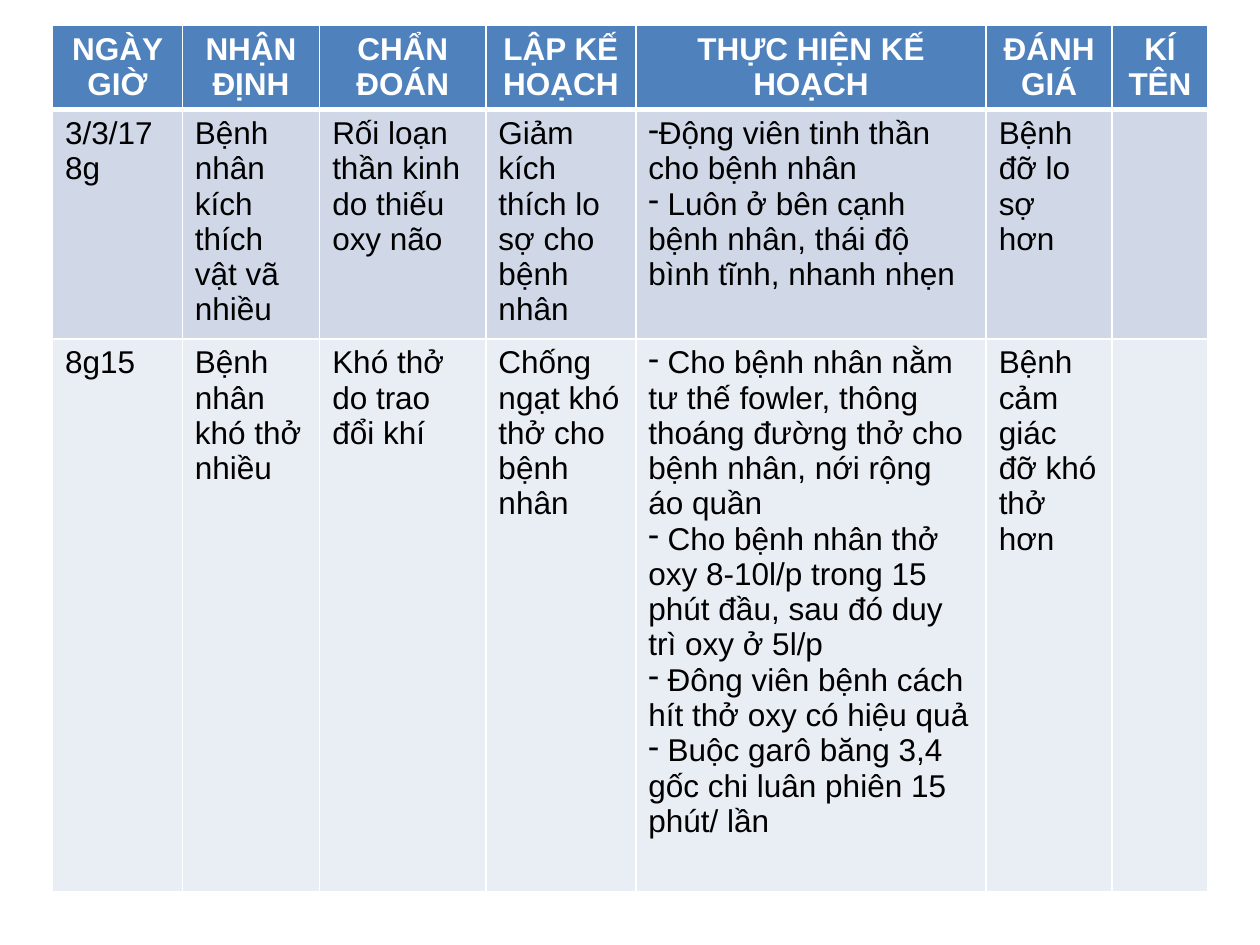
from lxml import etree
from pptx import Presentation
from pptx import util as u
from pptx.dml.color import RGBColor
from pptx.enum import text
from pptx.oxml import ns

COLORS = {
    "header": "4F81BD",
    "odd": "D0D8E8",
    "even": "E9EDF4",
    "white": "FFFFFF",
    "black": "000000",
}
COLUMN_WIDTHS = [74.2, 78.5, 95, 85.7, 200.2, 72, 54.7]
ROW_HEIGHTS = [48.2, 131, 316.1]
CARE_PLAN = [
    ["NGÀY GIỜ", "NHẬN ĐỊNH", "CHẨN ĐOÁN", "LẬP KẾ HOẠCH",
     "THỰC HIỆN KẾ HOẠCH", "ĐÁNH GIÁ", "KÍ TÊN"],
    ["3/3/17\n8g", "Bệnh nhân kích thích vật vã nhiều",
     "Rối loạn thần kinh do thiếu oxy não",
     "Giảm kích thích lo sợ cho bệnh nhân",
     ["Động viên tinh thần cho bệnh nhân",
      " Luôn ở bên cạnh bệnh nhân, thái độ bình tĩnh, nhanh nhẹn"],
     "Bệnh đỡ lo sợ hơn", ""],
    ["8g15", "Bệnh nhân khó thở nhiều", "Khó thở do trao đổi khí",
     "Chống ngạt khó thở cho bệnh nhân",
     [" Cho bệnh nhân nằm tư thế fowler, thông thoáng đường thở cho bệnh nhân, nới rộng áo quần",
      " Cho bệnh nhân thở oxy 8-10l/p trong 15 phút đầu, sau đó duy trì oxy ở 5l/p",
      " Đông viên bệnh cách hít thở oxy có hiệu quả",
      " Buộc garô băng 3,4 gốc chi luân phiên 15 phút/ lần"],
     "Bệnh cảm giác đỡ khó thở hơn", ""],
]


class SlideBuilder:
    """Holds the text style and the current slide, and draws its elements."""

    font_name = "Arial"
    font_size = u.Pt(18)

    def __init__(self, slide):
        self.slide = slide

    def color(self, name):
        return RGBColor.from_string(COLORS[name])

    def table(self, left, top, widths, heights, rows):
        frame = self.slide.shapes.add_table(
            len(heights), len(widths), u.Pt(left), u.Pt(top),
            u.Pt(sum(widths)), u.Pt(sum(heights)))
        table = frame.table
        for column, width in zip(table.columns, widths):
            column.width = u.Pt(width)
        for index, (row, height) in enumerate(zip(table.rows, heights)):
            row.height = u.Pt(height)
            for cell, content in zip(row.cells, rows[index]):
                self.cell(cell, content, index)

    def cell(self, cell, content, row_index):
        header = row_index == 0
        self.borders(cell, top=3 if row_index == 1 else 1, bottom=3 if header else 1)
        cell.fill.solid()
        cell.fill.fore_color.rgb = self.color(("header", "odd", "even")[row_index])
        bulleted = isinstance(content, list)
        cell.text_frame.text = "\n".join(content) if bulleted else content
        for paragraph in cell.text_frame.paragraphs:
            paragraph.alignment = text.PP_ALIGN.CENTER if header else text.PP_ALIGN.LEFT
            paragraph.font.name = self.font_name
            paragraph.font.size = self.font_size
            paragraph.font.bold = header
            paragraph.font.color.rgb = self.color("white" if header else "black")
            if bulleted:
                self.bullet(paragraph)

    def borders(self, cell, top, bottom):
        properties = cell._tc.get_or_add_tcPr()
        for side, width in (("L", 1), ("R", 1), ("T", top), ("B", bottom)):
            line = etree.SubElement(properties, ns.qn(f"a:ln{side}"), w=str(u.Pt(width)))
            fill = etree.SubElement(line, ns.qn("a:solidFill"))
            etree.SubElement(fill, ns.qn("a:srgbClr"), val=COLORS["white"])

    def bullet(self, paragraph):
        properties = paragraph._p.get_or_add_pPr()
        properties.set("marL", "0")
        properties.set("indent", "0")
        mark = etree.Element(ns.qn("a:buChar"), char="-")
        properties.find(ns.qn("a:defRPr")).addprevious(mark)


def main():
    presentation = Presentation()
    presentation.slide_width = u.Pt(720)
    presentation.slide_height = u.Pt(540)
    slide = presentation.slides.add_slide(presentation.slide_layouts[6])
    builder = SlideBuilder(slide)
    builder.table(30, 14.5, COLUMN_WIDTHS, ROW_HEIGHTS, CARE_PLAN)
    presentation.save("out.pptx")


if __name__ == "__main__":
    main()
